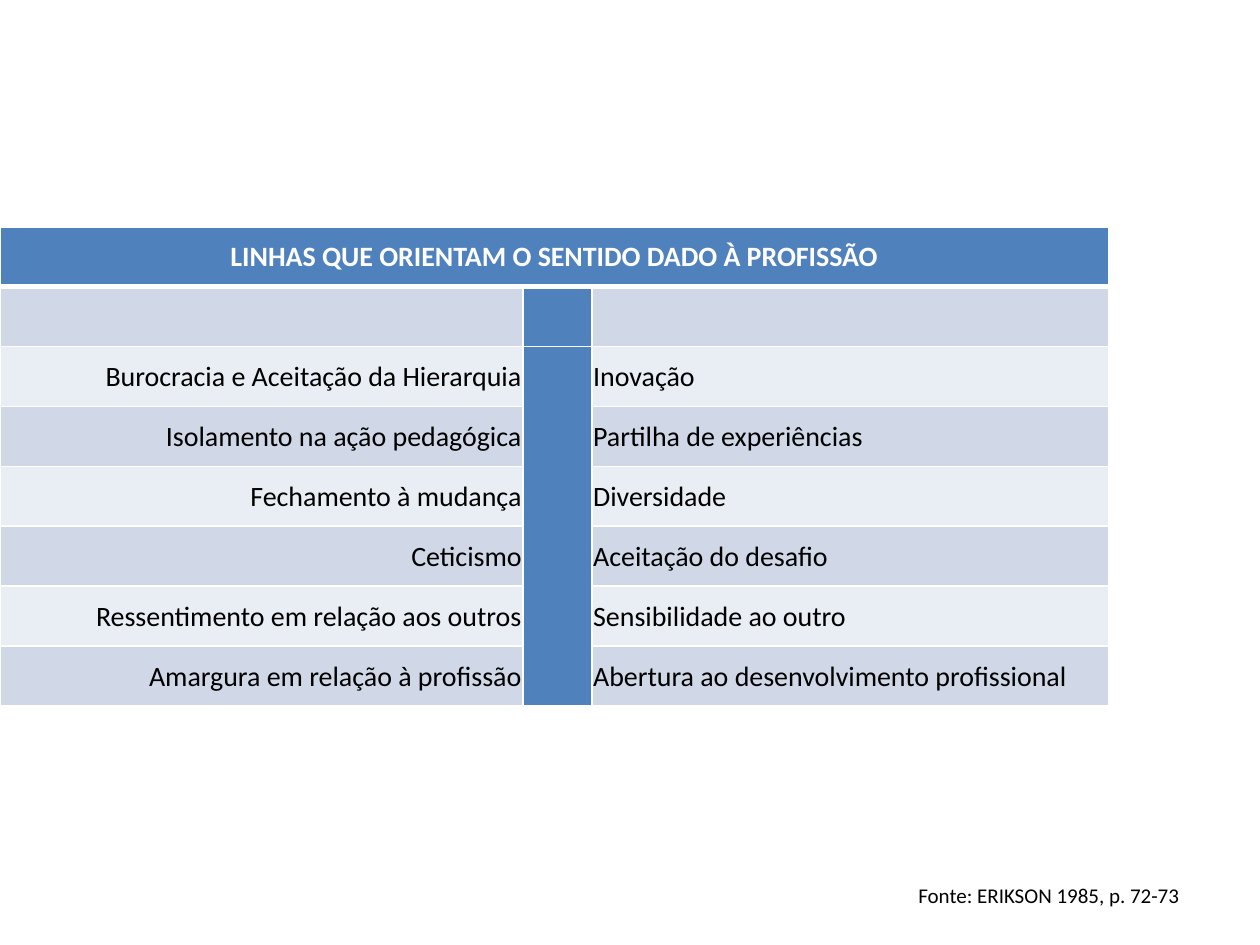
from lxml.etree import SubElement
from pptx import Presentation
from pptx.dml.color import RGBColor
from pptx.enum.text import MSO_ANCHOR as Anchor, PP_ALIGN as Align
from pptx.oxml.ns import qn
from pptx.util import Inches, Pt

WIDTH, HEIGHT = 10, 7.5
BLUE, WHITE, BLACK = "4F81BD", "FFFFFF", "000000"
BANDS = ("D0D8E8", "E9EDF4")
HEADING = "LINHAS QUE ORIENTAM O SENTIDO DADO À PROFISSÃO"
PAIRS = [
    ("Burocracia e Aceitação da Hierarquia", "Inovação"),
    ("Isolamento na ação pedagógica", "Partilha de experiências"),
    ("Fechamento à mudança", "Diversidade"),
    ("Ceticismo", "Aceitação do desafio"),
    ("Ressentimento em relação aos outros", "Sensibilidade ao outro"),
    ("Amargura em relação à profissão", "Abertura ao desenvolvimento profissional"),
]


def color(value):
    return RGBColor.from_string(value)


class SlideBuilder:
    font = "Calibri"

    def __init__(self, slide):
        self.slide = slide

    def area(self, left, top, width, height):
        return (Inches(left * WIDTH), Inches(top * HEIGHT),
                Inches(width * WIDTH), Inches(height * HEIGHT))

    def add_text(self, para, text, size, ink=BLACK, bold=False, align=Align.LEFT):
        para.alignment = align
        span = para.add_run()
        span.text = text
        span.font.name, span.font.size, span.font.bold = self.font, Pt(size), bold
        span.font.color.rgb = color(ink)

    def text(self, share, text, size):
        box = self.slide.shapes.add_textbox(*self.area(*share))
        box.text_frame.word_wrap = True
        self.add_text(box.text_frame.paragraphs[0], text, size)

    def table(self, share, columns, row_count):
        frame = self.slide.shapes.add_table(row_count, len(columns), *self.area(*share))
        table = frame.table
        total = sum(columns)
        for column, part in zip(table.columns, columns):
            column.width = int(frame.width * part / total)
        return table

    def cell(self, cell, fill, bottom=1):
        properties = cell._tc.get_or_add_tcPr()
        for side, points in (("L", 1), ("R", 1), ("T", 1), ("B", bottom)):
            line = SubElement(properties, qn(f"a:ln{side}"), w=str(Pt(points)))
            paint = SubElement(line, qn("a:solidFill"))
            SubElement(paint, qn("a:srgbClr"), val=WHITE)
        cell.fill.solid()
        cell.fill.fore_color.rgb = color(fill)
        cell.vertical_anchor = Anchor.MIDDLE

    def entry(self, cell, text, align):
        cell.margin_left = cell.margin_right = cell.margin_top = Inches(0.01)
        cell.margin_bottom = 0
        self.add_text(cell.text_frame.paragraphs[0], text, 16, align=align)


def main():
    deck = Presentation()
    deck.slide_width, deck.slide_height = Inches(WIDTH), Inches(HEIGHT)
    page = SlideBuilder(deck.slides.add_slide(deck.slide_layouts[6]))

    row_count = len(PAIRS) + 2
    table = page.table((0, 0.24, 0.965, 0.507), (4.15, 0.5, 5), row_count)
    for row in range(row_count):
        band = BANDS[(row + 1) % 2]
        fills = (BLUE,) * 3 if row == 0 else (band, BLUE, band)
        for column, fill in enumerate(fills):
            page.cell(table.cell(row, column), fill, bottom=3 if row == 0 else 1)

    table.cell(0, 0).merge(table.cell(0, 2))
    table.cell(2, 1).merge(table.cell(row_count - 1, 1))
    page.add_text(table.cell(0, 0).text_frame.paragraphs[0], HEADING, 16,
                  WHITE, True, Align.CENTER)
    for row, (left, right) in enumerate(PAIRS, start=2):
        page.entry(table.cell(row, 0), left, Align.RIGHT)
        page.entry(table.cell(row, 2), right, Align.LEFT)

    page.text((0.719, 0.927, 0.261, 0.04), "Fonte: ERIKSON 1985, p. 72-73", 12)
    deck.save("out.pptx")


if __name__ == "__main__":
    main()
